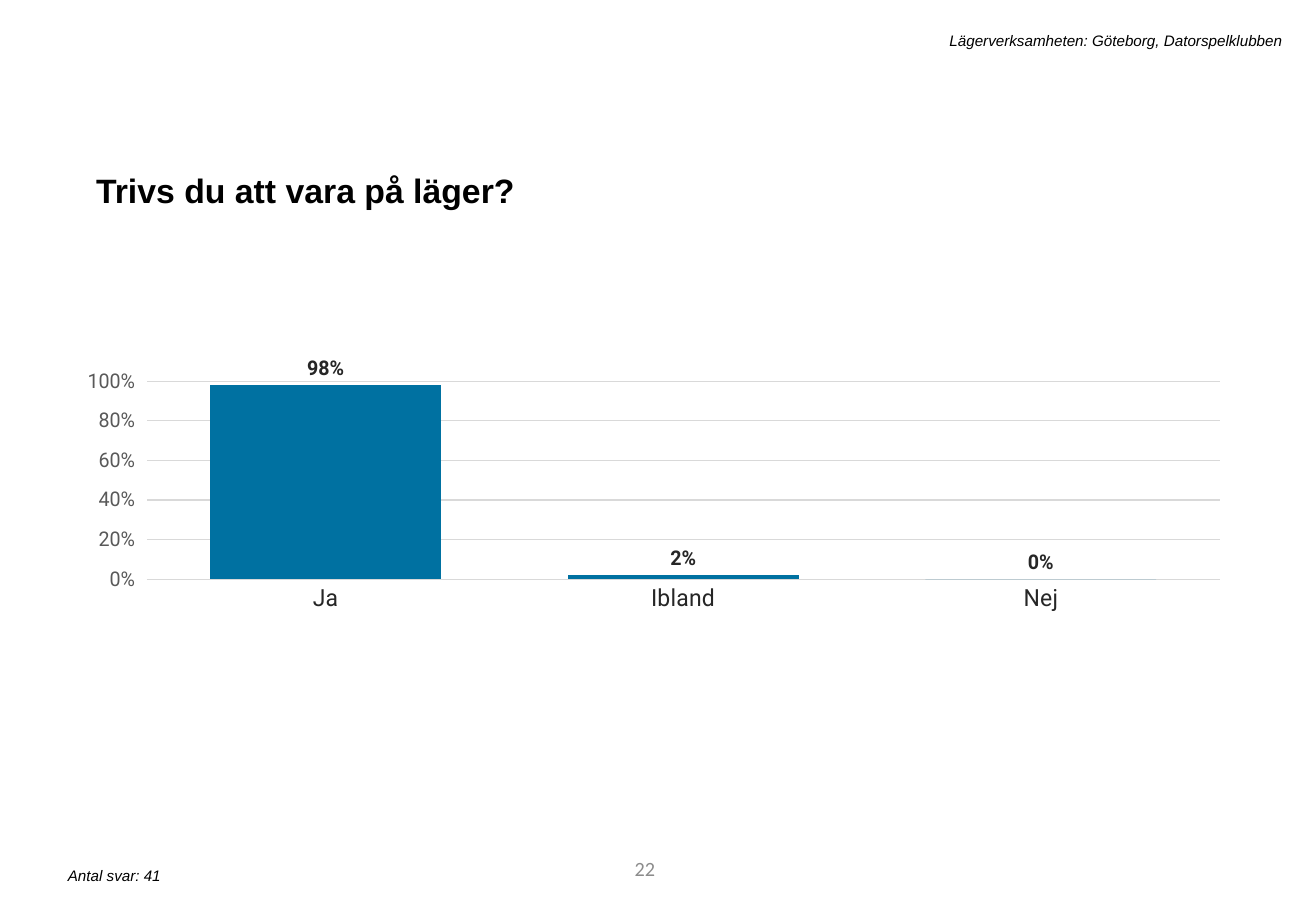
from dataclasses import dataclass

from lxml import etree
from pptx import Presentation
from pptx.chart.data import CategoryChartData
from pptx.dml.color import RGBColor
from pptx.enum.chart import XL_CHART_TYPE, XL_LABEL_POSITION, XL_TICK_MARK
from pptx.enum.text import MSO_ANCHOR, MSO_AUTO_SIZE, PP_ALIGN
from pptx.oxml.ns import qn
from pptx.slide import Slide
from pptx.text.text import Font, TextFrame
from pptx.util import Emu, Pt

PX = 9144  # 100 px to the inch


@dataclass(frozen=True)
class Theme:
    text: str = "000000"
    muted: str = "8C8C8C"
    label: str = "262626"
    scale: str = "595959"
    grid: str = "D9D9D9"
    bar: str = "0071A1"
    body_font: str = "Arial"
    number_font: str = "Calibri"
    chart_font: str = "Roboto"
    title_size: int = 20
    category_size: int = 14
    value_size: int = 12
    chart_size: int = 10
    note_size: int = 9


THEME = Theme()


@dataclass(frozen=True)
class Box:
    left: int
    top: int
    width: int
    height: int

    def emu(self) -> tuple[Emu, Emu, Emu, Emu]:
        return tuple(Emu(v * PX) for v in (self.left, self.top, self.width, self.height))


@dataclass(frozen=True)
class Note:
    text: str
    box: Box
    align: PP_ALIGN = PP_ALIGN.LEFT
    anchor: MSO_ANCHOR = MSO_ANCHOR.TOP
    font: str = THEME.body_font
    size: int = THEME.note_size
    color: str = THEME.text
    italic: bool = True


NOTES = [
    Note("22", Box(305, 695, 244, 40), PP_ALIGN.RIGHT, MSO_ANCHOR.MIDDLE,
         THEME.number_font, THEME.value_size, THEME.muted, italic=False),
    Note("Antal svar: 41", Box(46, 708, 441, 25)),
    Note("Lägerverksamheten: Göteborg, Datorspelklubben", Box(179, 21, 886, 25),
         PP_ALIGN.RIGHT),
]
TITLE_BOX = Box(69, 128, 940, 47)
CHART_BOX = Box(72, 253, 940, 395)
ANSWERS = {"Ja": 0.98, "Ibland": 0.02, "Nej": 0}
PLOT_AREA = {"x": 0.025, "y": 0.154, "w": 0.966, "h": 0.413}


def style_font(font: Font, name: str, size: int, color: str,
               bold: bool = False, italic: bool = False) -> None:
    font.name, font.size = name, Pt(size)
    font.bold, font.italic = bold, italic
    font.color.rgb = RGBColor.from_string(color)


def write(tf: TextFrame, text: str, *, font: str = THEME.body_font,
          size: int = THEME.note_size, color: str = THEME.text,
          bold: bool = False, italic: bool = False,
          align: PP_ALIGN = PP_ALIGN.LEFT, anchor: MSO_ANCHOR = MSO_ANCHOR.TOP,
          line_spacing: float = 1.0, space_before: int = 0) -> None:
    tf.word_wrap = True
    tf.auto_size = MSO_AUTO_SIZE.NONE
    tf.vertical_anchor = anchor
    p = tf.paragraphs[0]
    p.alignment = align
    p.line_spacing, p.space_before = line_spacing, Pt(space_before)
    r = p.add_run()
    r.text = text
    style_font(r.font, font, size, color, bold, italic)


def add_title(s: Slide, text: str) -> None:
    sp = s.shapes.title
    sp.left, sp.top, sp.width, sp.height = TITLE_BOX.emu()
    write(sp.text_frame, text, size=THEME.title_size, bold=True,
          line_spacing=1.2, space_before=10)


def add_note(s: Slide, note: Note) -> None:
    sp = s.shapes.add_textbox(*note.box.emu())
    write(sp.text_frame, note.text, font=note.font, size=note.size,
          color=note.color, italic=note.italic, align=note.align, anchor=note.anchor)


def set_plot_area(chart) -> None:
    """Fix the inner plot area as fractions of the chart."""
    area = chart._chartSpace.chart.plotArea
    for old in area.findall(qn("c:layout")):
        area.remove(old)
    layout = etree.Element(qn("c:layout"))
    manual = etree.SubElement(layout, qn("c:manualLayout"))
    settings = {"layoutTarget": "inner", "xMode": "edge", "yMode": "edge", **PLOT_AREA}
    for tag, value in settings.items():
        etree.SubElement(manual, qn(f"c:{tag}")).set("val", str(value))
    area.insert(0, layout)


def add_answer_chart(s: Slide) -> None:
    data = CategoryChartData(number_format="0%")
    data.categories = list(ANSWERS)
    data.add_series("Series 1", list(ANSWERS.values()))
    chart = s.shapes.add_chart(XL_CHART_TYPE.COLUMN_CLUSTERED, *CHART_BOX.emu(), data).chart
    chart.has_legend = chart.has_title = False
    style_font(chart.font, THEME.chart_font, THEME.chart_size, THEME.text)
    set_plot_area(chart)

    categories, values = chart.category_axis, chart.value_axis
    categories.major_tick_mark = XL_TICK_MARK.NONE
    style_font(categories.tick_labels.font, THEME.chart_font, THEME.category_size, THEME.label)
    values.minimum_scale, values.maximum_scale, values.major_unit = 0, 1, 0.2
    values.major_tick_mark = XL_TICK_MARK.OUTSIDE
    values.format.line.fill.background()
    values.tick_labels.number_format = "0%"
    values.tick_labels.number_format_is_linked = False
    style_font(values.tick_labels.font, THEME.chart_font, THEME.value_size, THEME.scale)
    for line in (categories.format.line, values.major_gridlines.format.line):
        line.color.rgb = RGBColor.from_string(THEME.grid)
        line.width = Pt(0.75)

    plot = chart.plots[0]
    plot.gap_width, plot.vary_by_categories = 55, False
    bars = plot.series[0]
    bars.format.fill.solid()
    bars.format.fill.fore_color.rgb = RGBColor.from_string(THEME.bar)
    labels = bars.data_labels
    labels.show_value = True
    labels.position = XL_LABEL_POSITION.OUTSIDE_END
    labels.number_format, labels.number_format_is_linked = "0%", False
    style_font(labels.font, THEME.chart_font, THEME.value_size, THEME.label, bold=True)


def main() -> None:
    prs = Presentation()
    prs.slide_width, prs.slide_height = Emu(1083 * PX), Emu(750 * PX)
    s = prs.slides.add_slide(prs.slide_layouts.get_by_name("Title Only"))
    add_title(s, "Trivs du att vara på läger?")
    add_answer_chart(s)
    for note in NOTES:
        add_note(s, note)
    prs.save("out.pptx")


if __name__ == "__main__":
    main()
